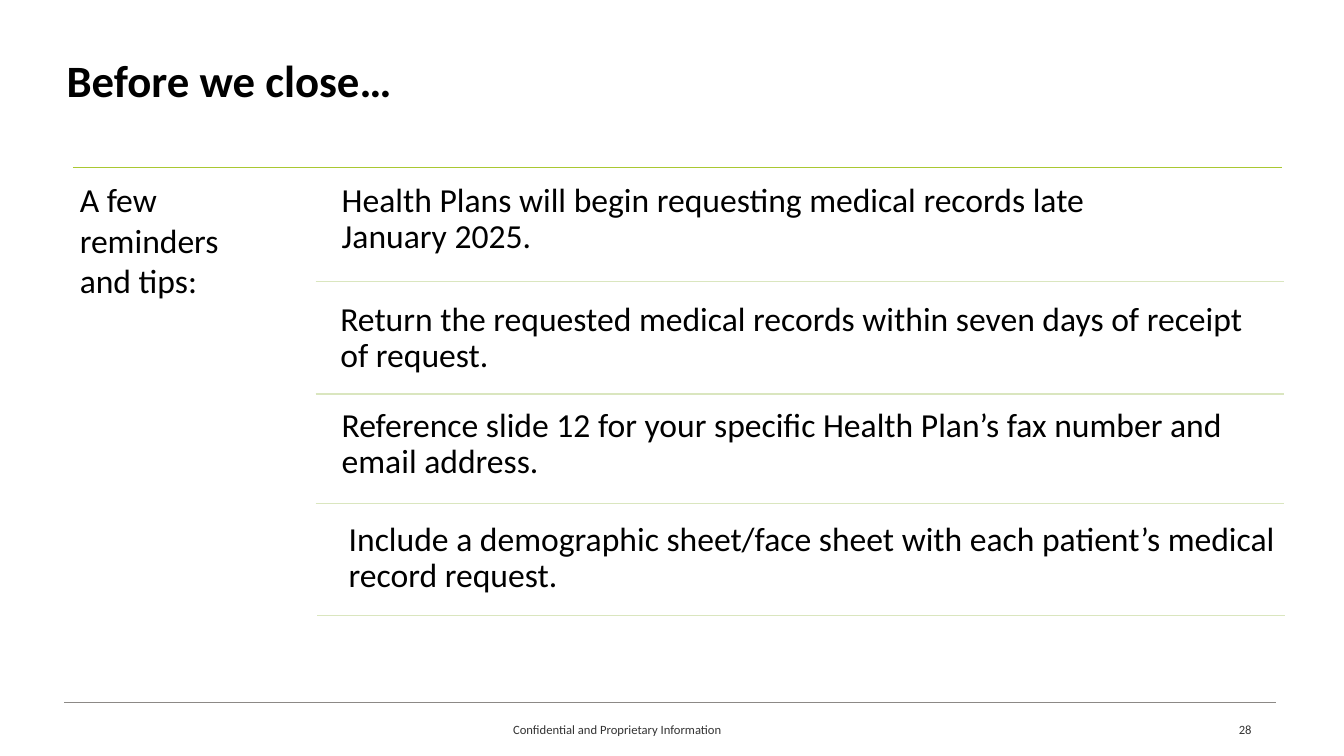
from lxml import etree
from pptx import Presentation
from pptx.dml.color import RGBColor
from pptx.enum.shapes import MSO_CONNECTOR
from pptx.enum.text import MSO_ANCHOR, PP_ALIGN
from pptx.oxml.ns import qn
from pptx.util import Pt

STRAIGHT = MSO_CONNECTOR.STRAIGHT
TOP = MSO_ANCHOR.TOP
LEFT, RIGHT = PP_ALIGN.LEFT, PP_ALIGN.RIGHT

COLOURS = {
    "text": "000000",
    "footer": "333333",
    "footer_rule": "8C8986",
    "top_rule": "AAC832",
    "item_rule": "DAE6BF",
}

REMINDERS = [
    ("Health Plans will begin requesting medical records late \vJanuary 2025.",
     (237, 124, 708, 68), (225.5, 201, 691.5)),
    ("Return the requested medical records within seven days of receipt of request.",
     (236, 209, 677, 66), (225.5, 281.5, 691.5)),
    ("Reference slide 12 for your specific Health Plan’s fax number and email address.",
     (237, 284.5, 667, 79), (225.5, 359.5, 691.5)),
    ("Include a demographic sheet/face sheet with each patient’s medical record request.",
     (242, 366, 708, 79), (226.5, 439.5, 691.5)),
]


def add_text(page, box, lines, size, colour="text", bold=False, inset=0,
             align=LEFT, spacing=1.0):
    frame = page.shapes.add_textbox(*map(Pt, box)).text_frame
    frame_format = {"word_wrap": True, "vertical_anchor": TOP}
    for side in ("left", "top", "right", "bottom"):
        frame_format[f"margin_{side}"] = Pt(inset)
    for name, value in frame_format.items():
        setattr(frame, name, value)
    frame.text = "\n".join(lines)
    for para in frame.paragraphs:
        para.alignment = align
        para.line_spacing = spacing
        for span in para.runs:
            for name, value in {"name": "Calibri", "size": Pt(size), "bold": bold}.items():
                setattr(span.font, name, value)
            span.font.color.rgb = RGBColor.from_string(COLOURS[colour])


def add_rule(page, left, top, width, colour, weight=1):
    rule = page.shapes.add_connector(
        STRAIGHT, Pt(left), Pt(top), Pt(left + width), Pt(top))
    rule.line.color.rgb = RGBColor.from_string(COLOURS[colour])
    rule.line.width = Pt(weight)
    etree.SubElement(rule._element.spPr, qn("a:effectLst"))


def add_footer(page, box):
    left, top, width, height = box
    add_rule(page, left, top, width, "footer_rule", 0.5)
    text_top = top + 13.5
    add_text(page, (left + 320.5, text_top, 276, height - 13.5),
             ["Confidential and Proprietary Information"], 9, "footer")
    add_text(page, (left + width - 233.5, text_top, 216, height - 13.5),
             ["28"], 9, "footer", align=RIGHT)


def add_heading(page, box):
    add_text(page, box, ["Before we close…"], 32, bold=True, spacing=0.9)


def add_reminders(page, box):
    left, top, width, height = box
    add_rule(page, left, top, width, "top_rule")
    add_text(page, (left + 5, top + 8.5, 169, height - 8.5),
             ["A few", "reminders", "and tips:"], 24)
    for wording, text_box, (rule_left, rule_top, rule_width) in REMINDERS:
        text_left, text_top, *text_size = text_box
        add_text(page, (left - 52 + text_left, top - 119.5 + text_top, *text_size),
                 [wording], 24, inset=7.2, spacing=0.9)
        add_rule(page, left - 52 + rule_left, top - 119.5 + rule_top,
                 rule_width, "item_rule")


def main():
    deck = Presentation()
    deck.slide_width, deck.slide_height = Pt(960), Pt(540)
    page = deck.slides.add_slide(deck.slide_layouts[6])
    add_footer(page, (46, 502, 865.5, 27.5))
    add_heading(page, (47.5, 42, 865, 79))
    add_reminders(page, (52, 119.5, 864, 348.5))
    deck.save("out.pptx")


if __name__ == "__main__":
    main()
